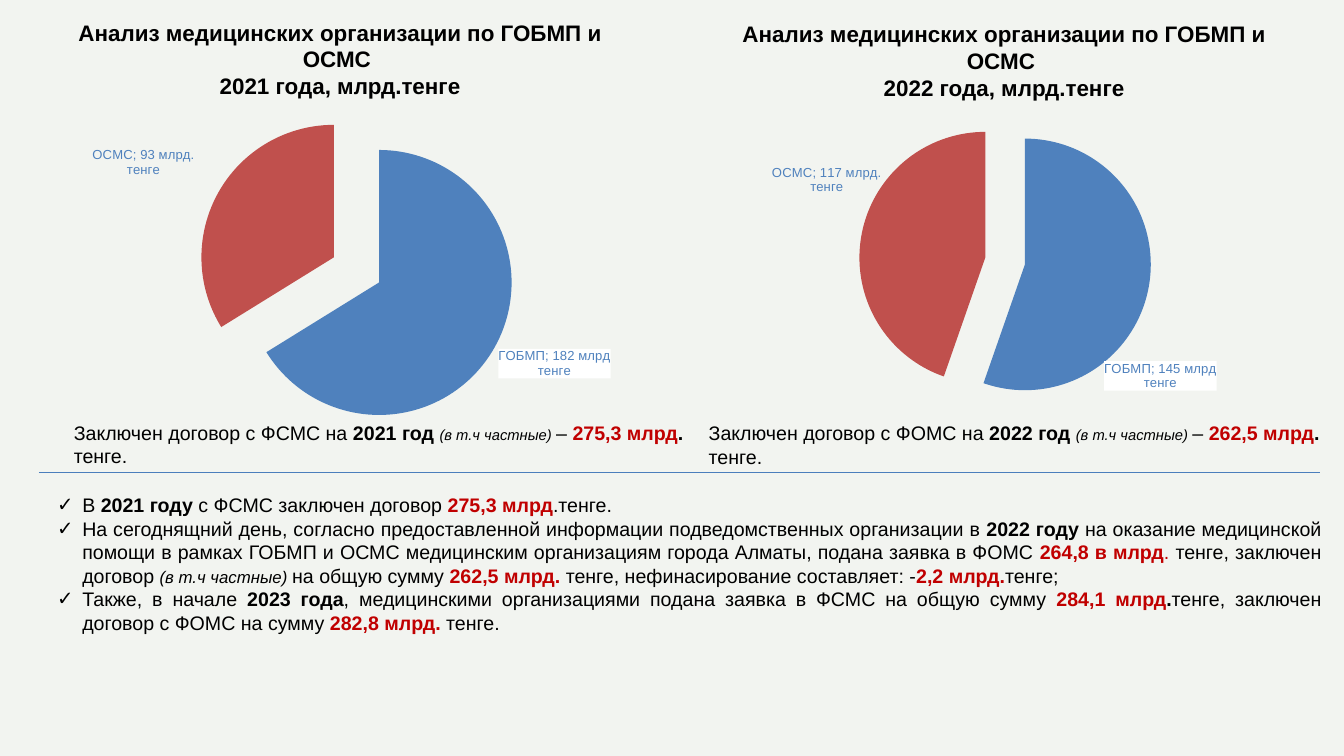
"""Build a slide comparing the 2021 and 2022 medical contracts with two pie charts."""
from lxml.etree import SubElement
from pptx import Presentation
from pptx.chart.data import CategoryChartData
from pptx.dml.color import RGBColor
from pptx.enum.chart import XL_CHART_TYPE, XL_LABEL_POSITION
from pptx.enum.shapes import MSO_CONNECTOR, MSO_SHAPE
from pptx.enum.text import MSO_ANCHOR, MSO_AUTO_SIZE, PP_ALIGN
from pptx.oxml import parse_xml
from pptx.oxml.ns import nsdecls, qn
from pptx.util import Cm, Pt

BACKGROUND = RGBColor(0xF2, 0xF4, 0xF0)
BLACK = RGBColor(0, 0, 0)
RED = RGBColor(0xC0, 0, 0)
BLUE_SLICE = RGBColor(0x4F, 0x81, 0xBD)
RED_SLICE = RGBColor(0xC0, 0x50, 0x4D)
RULE = RGBColor(0x4B, 0x7E, 0xBC)

STYLES = {
    "heading": {"size": Pt(24), "bold": True, "color": BLACK},
    "plain": {"size": Pt(21), "bold": False, "color": BLACK},
    "bold": {"size": Pt(21), "bold": True, "color": BLACK},
    "amount": {"size": Pt(21), "bold": True, "color": RED},
    "red": {"size": Pt(21), "bold": False, "color": RED},
    "small": {"size": Pt(15.8), "bold": False, "italic": True, "color": BLACK},
    "note": {"size": Pt(18), "bold": False, "italic": True, "color": BLACK},
    "label": {"size": Pt(14), "bold": False, "color": BLUE_SLICE},
}


def write(frame, paragraphs, alignment):
    """Fill a text frame with paragraphs of (text, style name) pairs."""
    for index, spans in enumerate(paragraphs):
        para = frame.paragraphs[0] if index == 0 else frame.add_paragraph()
        para.alignment = alignment
        for text, style in spans:
            span = para.add_run()
            span.text = text
            span.font.name = "Arial"
            for name, value in STYLES[style].items():
                if name == "color":
                    span.font.color.rgb = value
                else:
                    setattr(span.font, name, value)


def manual_layout(values, inner=False):
    """Return a chart layout element with the given fractions."""
    layout = parse_xml(f"<c:layout {nsdecls('c')}><c:manualLayout/></c:layout>")
    settings = {"layoutTarget": "inner", "xMode": "edge", "yMode": "edge"} if inner else {}
    settings.update(zip("xywh", values))
    for name, value in settings.items():
        SubElement(layout[0], qn(f"c:{name}")).set("val", str(value))
    return layout


deck = Presentation()
deck.slide_width, deck.slide_height = Cm(50.8), Cm(28.58)
page = deck.slides.add_slide(deck.slide_layouts[5])
backdrop = page.shapes.add_shape(MSO_SHAPE.RECTANGLE, 0, 0, deck.slide_width, deck.slide_height)
backdrop.shadow.inherit = False
backdrop.fill.solid()
backdrop.fill.fore_color.rgb = BACKGROUND
backdrop.line.fill.background()
page.shapes.title.element.addprevious(backdrop.element)

years = [
    {
        "year": "2021", "fund": "ФСМС", "total": "275,3 млрд",
        "heading": (2.41, 0.58), "summary": (2.54, 15.77),
        "chart": (1.47, 2.85, 25.35, 13.36), "plot": (0.01, 0.14, 0.86, 0.75),
        "values": (182, 93), "explosions": (39, 0),
        "labels": ("ГОБМП; 182 млрд тенге", "ОСМС; 93 млрд. тенге"),
        "shifts": (None, (-0.03, -0.04)),
    },
    {
        "year": "2022", "fund": "ФОМС", "total": "262,5 млрд",
        "heading": (27.51, 0.64), "summary": (26.54, 15.8),
        "chart": (26.87, 0.64, 23.01, 14.2), "plot": (0.08, 0.31, 0.77, 0.67),
        "values": (145, 117), "explosions": (25, 7),
        "labels": ("ГОБМП; 145 млрд тенге", "ОСМС; 117 млрд. тенге"),
        "shifts": ((-0.08, 0.2), (0.04, -0.11)),
    },
]

for item in years:
    data = CategoryChartData(number_format="#,##0.00")
    data.categories = ["ГОБМП", "ОСМС"]
    data.add_series("Series 1", item["values"])
    place = [Cm(length) for length in item["chart"]]
    chart = page.shapes.add_chart(XL_CHART_TYPE.PIE, *place, data).chart
    chart.has_legend = False
    chart.has_title = False
    chart.font.name, chart.font.size = "Calibri", Pt(10)
    chart.font.color.rgb = BLACK
    chart.plots[0].vary_by_categories = True
    root = chart.element
    root.find(qn("c:chart")).addnext(
        parse_xml(f"<c:spPr {nsdecls('c', 'a')}><a:noFill/><a:ln><a:noFill/></a:ln></c:spPr>"))
    plot_area = root.find(".//" + qn("c:plotArea"))
    for layout in plot_area.findall(qn("c:layout")):
        plot_area.remove(layout)
    plot_area.insert(0, manual_layout(item["plot"], inner=True))

    series = chart.plots[0].series[0]
    labels = series.data_labels
    labels.show_value = labels.show_category_name = True
    labels.position = XL_LABEL_POSITION.OUTSIDE_END
    labels.number_format, labels.number_format_is_linked = "#,##0.00", False
    labels.font.name, labels.font.size, labels.font.bold = "Arial", Pt(14), True
    labels.font.color.rgb = BLUE_SLICE
    for leader in root.findall(".//" + qn("c:showLeaderLines")):
        leader.set("val", "0")

    for index, color in enumerate((BLUE_SLICE, RED_SLICE)):
        point = series.points[index]
        point.format.fill.solid()
        point.format.fill.fore_color.rgb = color
        point.format.line.fill.background()
        write(point.data_label.text_frame, [[(item["labels"][index], "label")]], PP_ALIGN.CENTER)
        point.data_label.position = XL_LABEL_POSITION.OUTSIDE_END
        slice_xml = root.findall(".//" + qn("c:dPt"))[index]
        slice_xml.find(qn("c:spPr")).addprevious(
            parse_xml(f'<c:explosion {nsdecls("c")} val="{item["explosions"][index]}"/>'))
        label_xml = root.findall(".//" + qn("c:dLbl"))[index]
        label_xml.find(qn("c:showCatName")).set("val", "1")
        if item["shifts"][index]:
            label_xml.find(qn("c:idx")).addnext(manual_layout(item["shifts"][index]))
        if index == 0:
            label_xml.find(qn("c:tx")).addnext(parse_xml(
                f'<c:spPr {nsdecls("c", "a")}><a:solidFill><a:srgbClr val="FFFFFF"/>'
                "</a:solidFill></c:spPr>"))

    if item["year"] == "2021":
        heading = page.shapes.title
    else:
        heading = page.shapes.add_textbox(0, 0, 0, 0)
    heading.left, heading.top = [Cm(length) for length in item["heading"]]
    heading.width, heading.height = Cm(20.88), Cm(3.33)
    heading.text_frame.word_wrap = True
    heading.text_frame.auto_size = MSO_AUTO_SIZE.NONE
    heading.text_frame.vertical_anchor = MSO_ANCHOR.TOP
    write(heading.text_frame, [
        [("Анализ медицинских организации по ГОБМП и ОСМС ", "heading")],
        [(f"{item['year']} года, млрд.тенге", "heading")],
    ], PP_ALIGN.CENTER)

    left, top = item["summary"]
    summary = page.shapes.add_textbox(Cm(left), Cm(top), Cm(23.98), Cm(2.06))
    summary.text_frame.word_wrap = True
    write(summary.text_frame, [[
        (f"Заключен договор с {item['fund']} на ", "plain"), (f"{item['year']} год ", "bold"),
        ("(в т.ч частные) ", "small"), ("– ", "plain"), (item["total"], "amount"),
        (". ", "bold"), ("тенге.", "plain"),
    ]], PP_ALIGN.LEFT)

rule = page.shapes.add_connector(MSO_CONNECTOR.STRAIGHT, Cm(1.47), Cm(17.86), Cm(49.89), Cm(17.86))
rule.line.color.rgb = RULE
rule.line.width = Pt(0.75)
SubElement(rule.element.spPr, qn("a:effectLst"))

findings = page.shapes.add_textbox(Cm(1.91), Cm(18.52), Cm(48.29), Cm(6.53))
findings.text_frame.word_wrap = True
write(findings.text_frame, [
    [("В ", "plain"), ("2021 году ", "bold"), ("с ФСМС заключен договор ", "plain"),
     ("275,3 млрд", "amount"), (".тенге.", "plain")],
    [("На сегоднящний день, согласно предоставленной информации подведомственных "
      "организации в ", "plain"), ("2022 году ", "bold"),
     ("на оказание медицинской помощи в рамках ГОБМП и ОСМС медицинским организациям "
      "города Алматы, подана заявка в ФОМС ", "plain"),
     ("264,8 в млрд", "amount"), (". ", "red"), ("тенге, заключен договор ", "plain"),
     ("(в т.ч частные) ", "note"), ("на общую сумму ", "plain"), ("262,5 млрд. ", "amount"),
     ("тенге, нефинасирование составляет: -", "plain"), ("2,2 млрд.", "amount"),
     ("тенге;", "plain")],
    [("Также, в начале ", "plain"), ("2023 года", "bold"),
     (", медицинскими организациями подана заявка в ФСМС на общую сумму ", "plain"),
     ("284,1 млрд", "amount"), (".", "bold"),
     ("тенге, заключен договор с ФОМС на сумму ", "plain"), ("282,8 млрд. ", "amount"),
     ("тенге.", "plain")],
], PP_ALIGN.JUSTIFY)
for para in findings.text_frame.paragraphs:
    properties = para._p.get_or_add_pPr()
    properties.set("marL", str(Cm(0.95)))
    properties.set("indent", str(Cm(-0.95)))
    SubElement(properties, qn("a:buFont")).set("typeface", "Arial")
    SubElement(properties, qn("a:buChar")).set("char", "✓")

deck.save("out.pptx")
